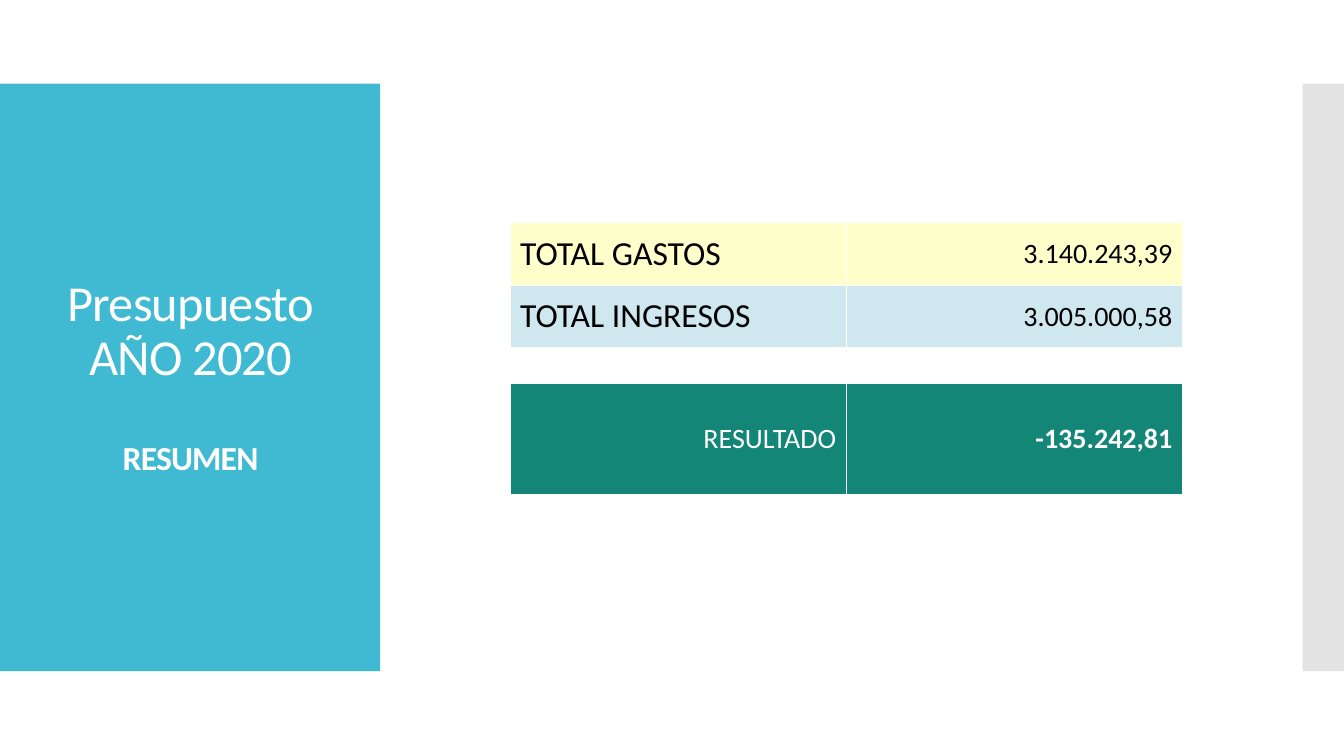
"""Build the 2020 budget summary slide."""
from dataclasses import dataclass

from lxml.etree import SubElement
from pptx import Presentation
from pptx.dml.color import RGBColor
from pptx.enum.shapes import MSO_SHAPE as Shape
from pptx.enum.text import MSO_ANCHOR as Anchor, PP_ALIGN as Align
from pptx.oxml.ns import qn
from pptx.util import Inches, Pt


@dataclass(frozen=True)
class Theme:
    font: str = "Calibri"
    panel: str = "40BAD2"
    edge: str = "C8C8C8"
    expenses: str = "FFFFCC"
    income: str = "CFE7EE"
    result: str = "138677"
    dark: str = "000000"
    light: str = "FFFFFF"
    title_size: int = 36
    label_size: int = 24
    amount_size: int = 20


theme = Theme()


def write(paragraph, text, *, size, color, bold=False, align=Align.LEFT,
          line_spacing=None, space_before=0, tracking=0):
    paragraph.alignment = align
    paragraph.line_spacing = line_spacing
    paragraph.space_before = Pt(space_before)
    run = paragraph.add_run()
    run.text = text
    run.font.name = theme.font
    run.font.size = Pt(size)
    run.font.bold = bold
    run.font.color.rgb = RGBColor.from_string(color)
    if tracking:
        run._r.get_or_add_rPr().set("spc", str(round(tracking * 100)))


presentation = Presentation()
presentation.slide_width = Inches(13.33)
presentation.slide_height = Inches(7.5)
slide = presentation.slides.add_slide(presentation.slide_layouts[6])

for left, width, color, opacity in (
    (0, 3.77, theme.panel, 100),
    (12.92, 0.41, theme.edge, 50),
):
    band = slide.shapes.add_shape(
        Shape.RECTANGLE, Inches(left), Inches(0.83), Inches(width), Inches(5.83))
    band.shadow.inherit = False
    band.fill.solid()
    band.fill.fore_color.rgb = RGBColor.from_string(color)
    band.line.fill.background()
    if opacity < 100:
        fill_color = band._element.spPr.find(f".//{qn('a:srgbClr')}")
        SubElement(fill_color, qn("a:alpha"), val=str(opacity * 1000))

title = slide.shapes.add_textbox(Inches(0.28), Inches(1.23), Inches(3.22), Inches(5.03))
title_frame = title.text_frame
title_frame.word_wrap = True
title_frame.vertical_anchor = Anchor.MIDDLE
for index, (text, size, bold, space_before) in enumerate((
    ("Presupuesto", theme.title_size, False, 0),
    ("AÑO 2020", theme.title_size, False, 0),
    ("RESUMEN", theme.label_size, True, 39),
)):
    paragraph = title_frame.add_paragraph() if index else title_frame.paragraphs[0]
    write(paragraph, text, size=size, color=theme.light, bold=bold, align=Align.CENTER,
          line_spacing=0.9, space_before=space_before, tracking=-0.6)

totals = (
    ("TOTAL GASTOS", "3.140.243,39", theme.expenses),
    ("TOTAL INGRESOS", "3.005.000,58", theme.income),
)
result = (("RESULTADO", "-135.242,81", theme.result),)

for rows, top, row_height, text_color, label_size, label_align, bold_amount in (
    (totals, 2.21, 0.62, theme.dark, theme.label_size, Align.LEFT, False),
    (result, 3.8, 1.11, theme.light, theme.amount_size, Align.RIGHT, True),
):
    table = slide.shapes.add_table(
        len(rows), 2, Inches(5.06), Inches(top),
        Inches(6.67), Inches(row_height * len(rows))).table
    for row, (label, amount, fill) in zip(table.rows, rows):
        row.height = Inches(row_height)
        for cell, text, size, align, bold in zip(
            row.cells, (label, amount), (label_size, theme.amount_size),
            (label_align, Align.RIGHT), (False, bold_amount),
        ):
            cell.fill.solid()
            cell.fill.fore_color.rgb = RGBColor.from_string(fill)
            cell.vertical_anchor = Anchor.MIDDLE
            write(cell.text_frame.paragraphs[0], text, size=size,
                  color=text_color, bold=bold, align=align)

presentation.save("out.pptx")
